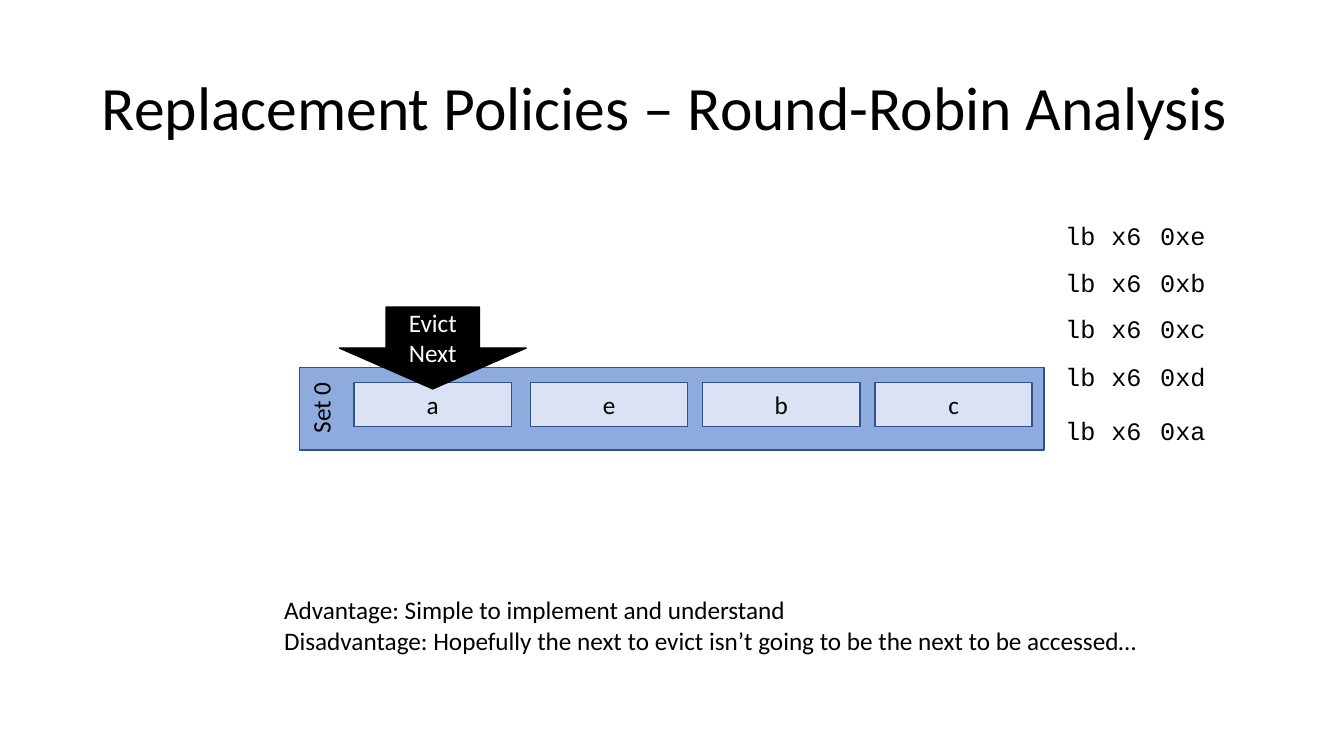
from pptx import Presentation
from pptx.dml.color import RGBColor
from pptx.enum.shapes import MSO_SHAPE
from pptx.enum.text import MSO_ANCHOR, PP_ALIGN
from pptx.util import Pt

TITLE = "Replacement Policies – Round-Robin Analysis"
BLOCKS = [("a", 253), ("e", 379), ("b", 502), ("c", 625)]
NOTES = [
    "Advantage: Simple to implement and understand",
    "Disadvantage: Hopefully the next to evict isn’t going to be the next to be accessed…",
]
LOADS = [("0xe", 29.5, 0), ("0xb", 33.1, 3.6), ("0xc", 33.8, 3.6),
         ("0xd", 36.7, 4.3), ("0xa", 31.7, 5.8)]
COLS = [(29.5, PP_ALIGN.LEFT), (32.4, PP_ALIGN.CENTER), (40.3, PP_ALIGN.RIGHT)]

BLACK = RGBColor(0, 0, 0)
WHITE = RGBColor(255, 255, 255)
BLUE = RGBColor(0x8F, 0xAA, 0xDC)
PALE = RGBColor(0xDA, 0xE2, 0xF3)
EDGE = RGBColor(0x2E, 0x52, 0x8F)


def style(frame, lines, size=18, color=BLACK, font="Calibri",
          align=PP_ALIGN.LEFT, anchor=MSO_ANCHOR.TOP):
    frame.text = "\n".join(lines)
    frame.word_wrap = True
    frame.vertical_anchor = anchor
    frame.margin_left = frame.margin_right = 0
    frame.margin_top = frame.margin_bottom = 0
    for para in frame.paragraphs:
        para.alignment = align
        for run in para.runs:
            run.font.size = Pt(size)
            run.font.name = font
            run.font.color.rgb = color


def add_form(kind, box, fill, edge):
    form = slide.shapes.add_shape(kind, *map(Pt, box))
    form.shadow.inherit = False
    form.fill.solid()
    form.fill.fore_color.rgb = fill
    form.line.color.rgb = edge
    form.line.width = Pt(1)
    return form


def add_text(box, lines):
    frame = slide.shapes.add_textbox(*map(Pt, box)).text_frame
    style(frame, lines)
    return frame


deck = Presentation()
deck.slide_width, deck.slide_height = Pt(960), Pt(540)
slide = deck.slides.add_slide(deck.slide_layouts[5])

title = slide.shapes.title
title.left, title.top, title.width, title.height = map(Pt, (13.7, 48.2, 932.4, 54.7))
style(title.text_frame, [TITLE], size=44)
title.text_frame.margin_left = Pt(59)
title.text_frame.margin_top = Pt(1)

add_form(MSO_SHAPE.RECTANGLE, (213.8, 262.6, 532, 59), BLUE, EDGE)
label = add_text((218.2, 271.5, 20, 38), ["Set 0"])
label._txBody.bodyPr.set("vert", "vert270")

for name, left in BLOCKS:
    block = add_form(MSO_SHAPE.RECTANGLE, (left, 273.3, 112.3, 31.5), PALE, EDGE)
    style(block.text_frame, [name], align=PP_ALIGN.CENTER, anchor=MSO_ANCHOR.MIDDLE)

arrow = add_form(MSO_SHAPE.DOWN_ARROW, (242.4, 219.4, 133.5, 58.4), BLACK, BLACK)
style(arrow.text_frame, ["Evict Next"], color=WHITE, align=PP_ALIGN.CENTER)

add_text((202.9, 424.8, 613, 45), NOTES)

grid = slide.shapes.add_table(len(LOADS), len(COLS), Pt(758.9), Pt(160.6),
                              Pt(102.2), Pt(164.8)).table
grid.first_row = grid.horz_banding = False
for col, (width, _) in zip(grid.columns, COLS):
    col.width = Pt(width)
for row, (address, height, inset) in zip(grid.rows, LOADS):
    row.height = Pt(height)
    for cell, word, (_, align) in zip(row.cells, ("lb", "x6", address), COLS):
        cell.fill.background()
        style(cell.text_frame, [word], font="Courier New", align=align)
        cell.margin_left = Pt(2 if align == PP_ALIGN.LEFT else 0)
        cell.margin_right = cell.margin_bottom = 0
        cell.margin_top = Pt(inset)

deck.save("out.pptx")
